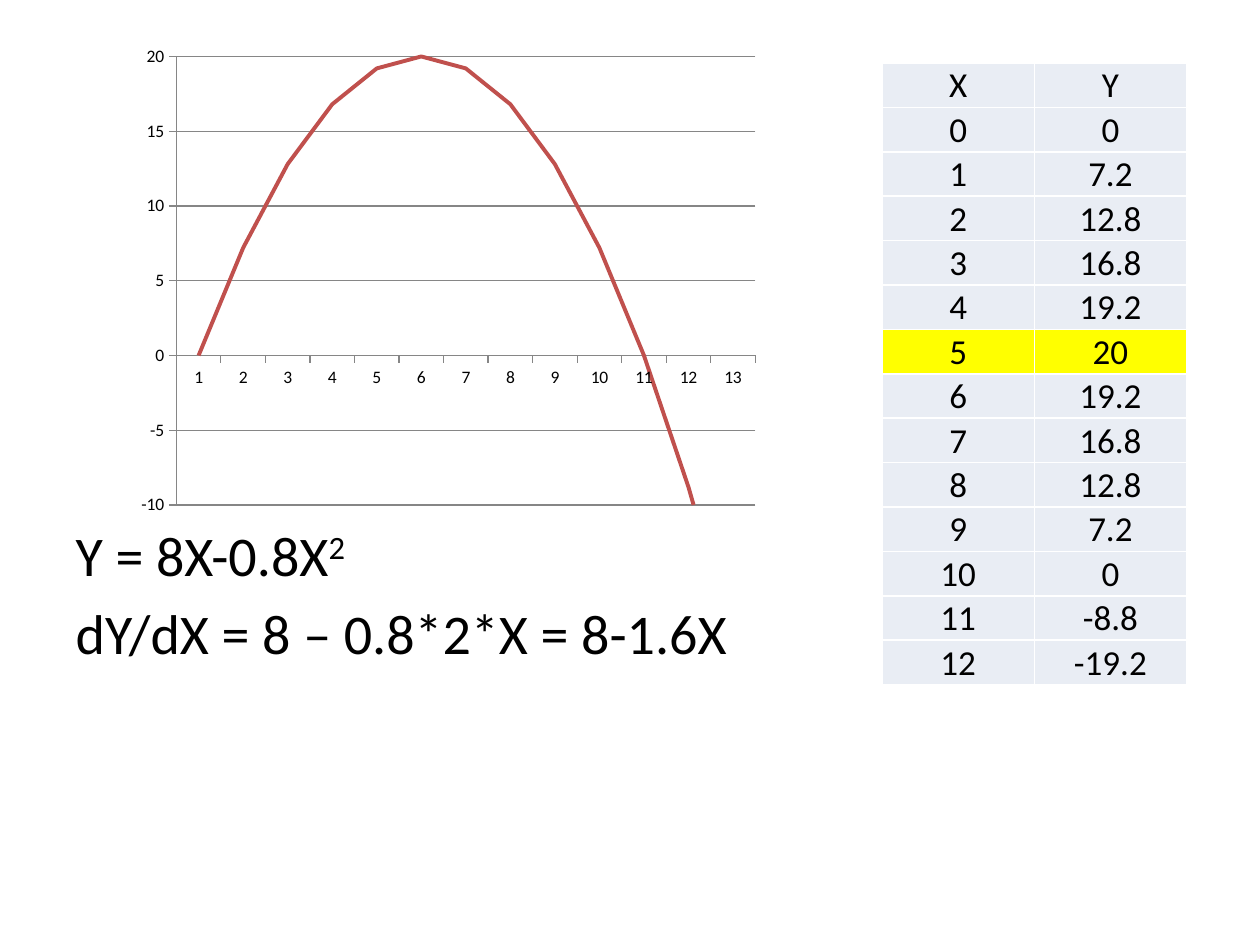
from lxml.etree import SubElement
from pptx import Presentation
from pptx.chart.data import CategoryChartData
from pptx.dml.color import RGBColor
from pptx.enum.chart import XL_CHART_TYPE as ChartType, XL_TICK_MARK as Tick
from pptx.enum.text import MSO_ANCHOR as Anchor, PP_ALIGN as Align
from pptx.oxml import parse_xml
from pptx.oxml.ns import nsdecls, qn
from pptx.util import Cm, Pt

FONT = "Calibri"
BLACK, WHITE, GREY = "000000", "FFFFFF", "868686"
CELL, PEAK, CURVE = "E9EDF4", "FFFF00", "C0504D"

X_VALUES = range(13)
Y_VALUES = [round(8 * x - 0.8 * x ** 2, 1) for x in X_VALUES]


def color(value):
    return RGBColor.from_string(value)


def set_font(font, size):
    font.name = FONT
    font.size = Pt(size)
    font.color.rgb = color(BLACK)


def add_span(para, text, size, baseline=0):
    span = para.add_run()
    span.text = text
    set_font(span.font, size)
    if baseline:
        span.font._element.set("baseline", str(baseline * 1000))


def place(shape, box):
    shape.left, shape.top, shape.width, shape.height = (Cm(v) for v in box)


def add_formulas(page, box):
    body = page.placeholders[1]
    place(body, box)
    formulas = [
        [("Y = 8X-0.8X", 0), ("2", 30)],
        [("dY/dX = 8 – 0.8*2*X = 8-1.6X", 0)],
    ]
    frame = body.text_frame
    for index, parts in enumerate(formulas):
        para = frame.add_paragraph() if index else frame.paragraphs[0]
        # No bullet and no hanging indent
        props = para._p.get_or_add_pPr()
        props.set("marL", "0")
        props.set("indent", "0")
        SubElement(props, qn("a:buNone"))
        for text, baseline in parts:
            add_span(para, text, 32, baseline)


def format_cell(cell, text, fill):
    cell.margin_left = cell.margin_right = cell.margin_top = Cm(0.03)
    cell.margin_bottom = 0
    cell.vertical_anchor = Anchor.BOTTOM
    # Borders come before the fill in the cell properties
    props = cell._tc.get_or_add_tcPr()
    for side in "LRTB":
        props.append(parse_xml(
            f'<a:ln{side} {nsdecls("a")} w="{Pt(1)}"><a:solidFill>'
            f'<a:srgbClr val="{WHITE}"/></a:solidFill></a:ln{side}>'))
    cell.fill.solid()
    cell.fill.fore_color.rgb = color(fill)
    para = cell.text_frame.paragraphs[0]
    para.alignment = Align.CENTER
    add_span(para, text, 20)


def add_value_table(page, box):
    rows = [("X", "Y")] + [(f"{x}", f"{y:g}") for x, y in zip(X_VALUES, Y_VALUES)]
    peak_row = 1 + Y_VALUES.index(max(Y_VALUES))
    left, top, width, height = box
    table = page.shapes.add_table(
        len(rows), 2, Cm(left), Cm(top), Cm(width), Cm(height)).table
    for row, texts in enumerate(rows):
        fill = PEAK if row == peak_row else CELL
        for column, text in enumerate(texts):
            format_cell(table.cell(row, column), text, fill)


def set_plot_area(chart, x, y, width, height):
    area = chart._chartSpace.chart.plotArea
    for old in area.findall(qn("c:layout")):
        area.remove(old)
    sizes = {"x": x, "y": y, "w": width, "h": height}
    area.insert(0, parse_xml(
        f'<c:layout {nsdecls("c")}><c:manualLayout><c:layoutTarget val="inner"/>'
        '<c:xMode val="edge"/><c:yMode val="edge"/>'
        + "".join(f'<c:{key} val="{value}"/>' for key, value in sizes.items())
        + "</c:manualLayout></c:layout>"))


def add_curve_chart(page, box):
    data = CategoryChartData()
    data.categories = [str(n + 1) for n in X_VALUES]
    data.add_series("Series 1", Y_VALUES)
    chart = page.shapes.add_chart(
        ChartType.LINE, *(Cm(v) for v in box), data).chart
    chart.has_legend = False
    chart.has_title = False
    set_font(chart.font, 10)
    set_plot_area(chart, 0.08, 0.03, 0.92, 0.94)

    # Axes and gridlines
    values = chart.value_axis
    values.minimum_scale, values.maximum_scale, values.major_unit = -10, 20, 5
    values.has_major_gridlines = True
    chart.category_axis.has_major_gridlines = False
    for axis in (values, chart.category_axis):
        axis.major_tick_mark = Tick.OUTSIDE
        axis.minor_tick_mark = Tick.NONE
    for part in (values, chart.category_axis, values.major_gridlines):
        part.format.line.color.rgb = color(GREY)
        part.format.line.width = Pt(0.75)

    # Curve
    chart.plots[0].vary_by_categories = False
    curve = chart.plots[0].series[0]
    curve.smooth = False
    curve.format.line.color.rgb = color(CURVE)
    curve.format.line.width = Pt(2.25)


def main():
    deck = Presentation()
    deck.slide_width, deck.slide_height = Cm(25.4), Cm(19.05)
    page = deck.slides.add_slide(deck.slide_layouts[1])
    title = page.shapes.title._element
    title.getparent().remove(title)

    add_formulas(page, (1.27, 10.36, 22.86, 8.05))
    add_value_table(page, (17.78, 1.27, 6.14, 12.22))
    add_curve_chart(page, (2.54, 0.85, 12.7, 9.62))
    deck.save("out.pptx")


if __name__ == "__main__":
    main()
